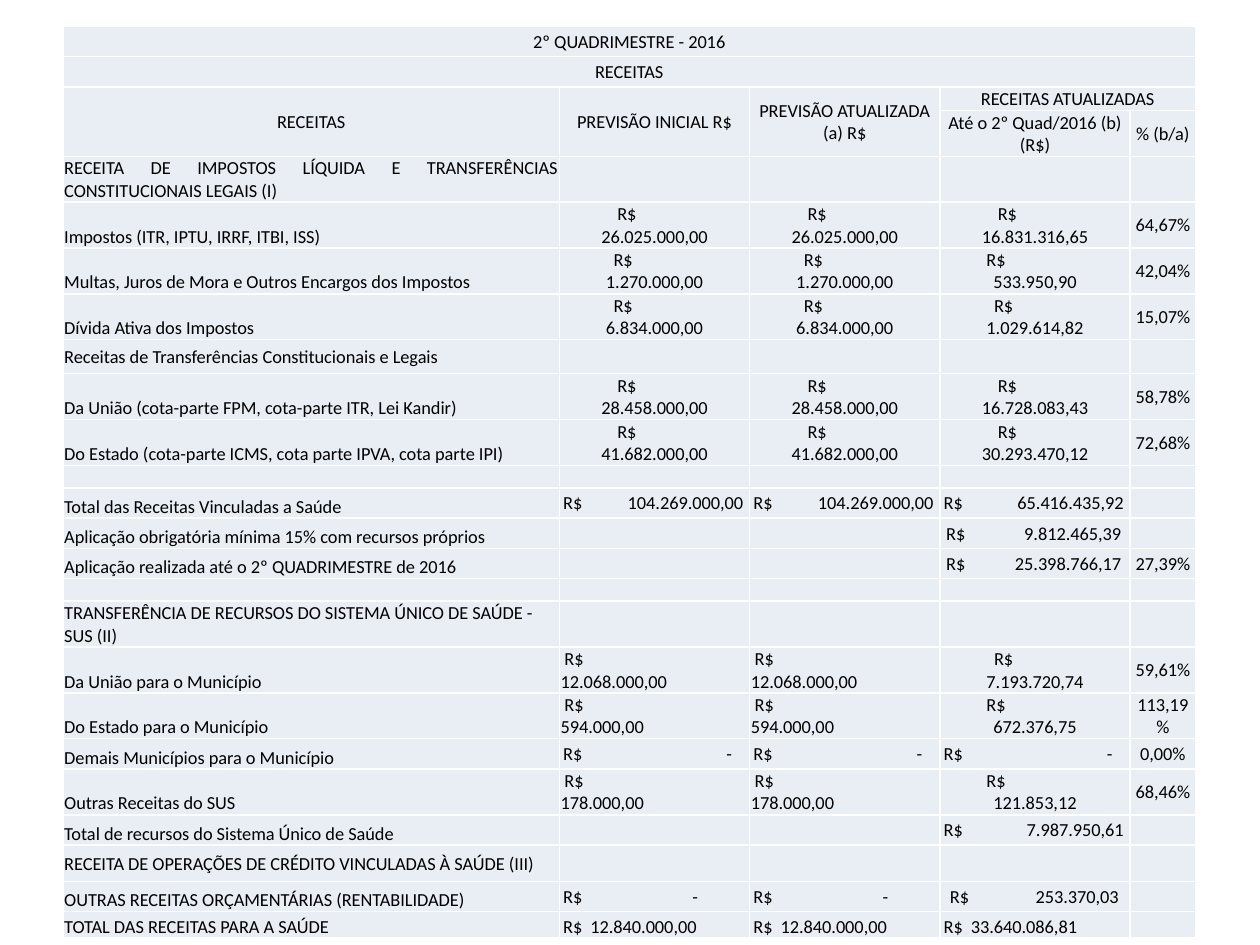
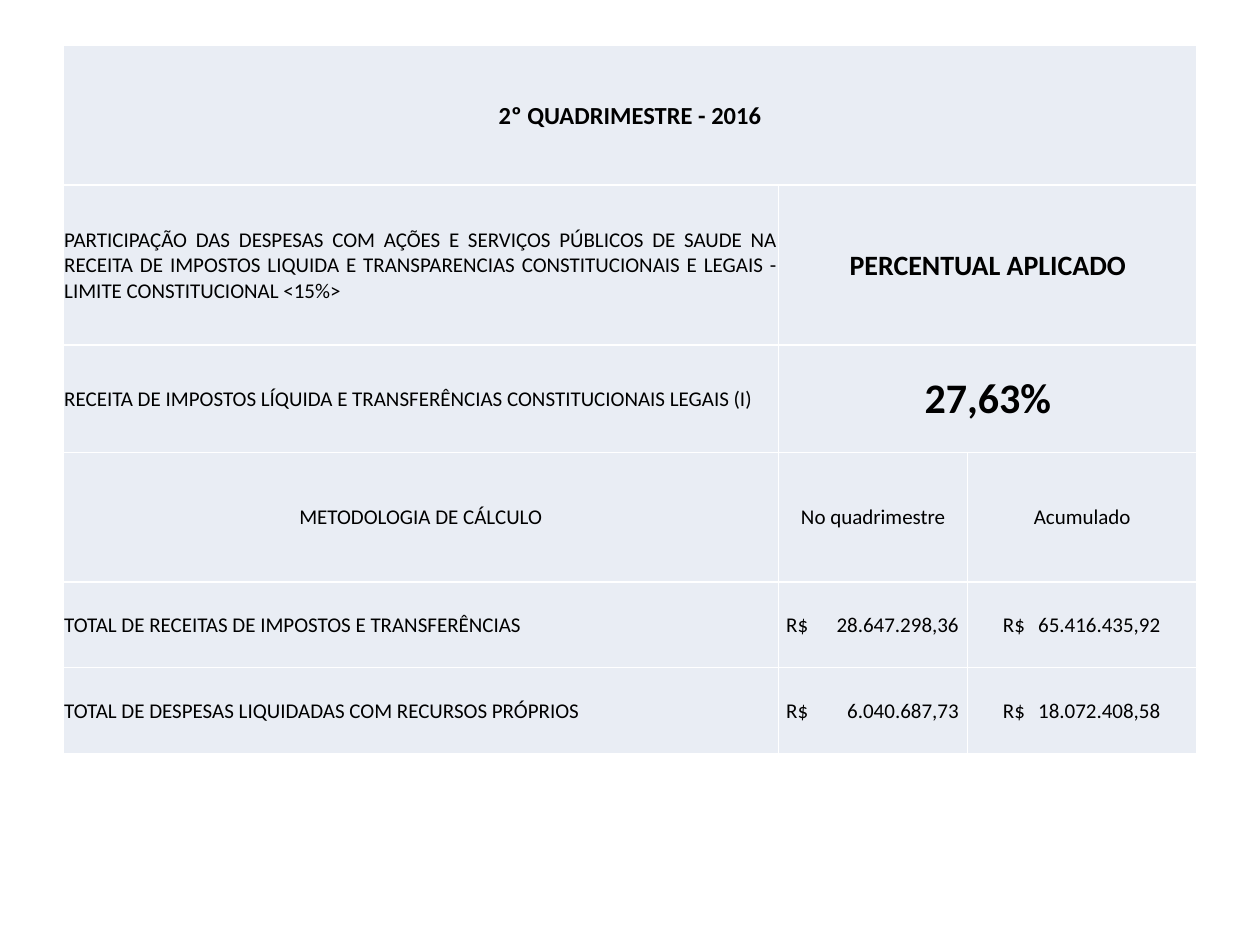
import pptx
import pptx.dml.color
import pptx.enum.text
import pptx.oxml
import pptx.oxml.ns
import pptx.util
from lxml import etree

Inches = pptx.util.Inches
Align = pptx.enum.text.PP_ALIGN
Anchor = pptx.enum.text.MSO_ANCHOR
qn = pptx.oxml.ns.qn

FONT = "Calibri"
INK, PAPER, RULE = "000000", "E9EDF4", "FFFFFF"
PERIOD = "2º QUADRIMESTRE - 2016"
TAXES = "RECEITA DE IMPOSTOS LÍQUIDA E TRANSFERÊNCIAS CONSTITUCIONAIS LEGAIS (I)"
LEFT, MID, FULL = Align.LEFT, Align.CENTER, Align.JUSTIFY
BASE, HALF = Anchor.BOTTOM, Anchor.MIDDLE
SMALL, BODY = 10.5, 12

PILE, EDGE = "pile", "edge"
WIDE, NEAR, DASH, TAIL = (0.03, 1.46), (0.05, 1.44), (0.03, 1.37), (0.03, 1.09)

HEADS = [
    (0, 0, 0, 4, PERIOD, HALF),
    (1, 0, 1, 4, "RECEITAS", HALF),
    (2, 0, 3, 0, "RECEITAS", HALF),
    (2, 1, 3, 1, "PREVISÃO INICIAL R$", HALF),
    (2, 2, 3, 2, "PREVISÃO ATUALIZADA (a) R$", HALF),
    (2, 3, 2, 4, "RECEITAS ATUALIZADAS", BASE),
    (3, 3, 3, 3, "Até o 2º Quad/2016 (b) (R$)", HALF),
    (3, 4, 3, 4, "% (b/a)", HALF),
]

# height, label, label anchor, forecast and its mode, revenue and its mode, rate
ITEMS = [
    (0.36, TAXES, HALF, "", None, "", None, ""),
    (0.36, "Impostos (ITR, IPTU, IRRF, ITBI, ISS)", BASE,
     "26.025.000,00", PILE, "16.831.316,65", PILE, "64,67%"),
    (0.36, "Multas, Juros de Mora e Outros Encargos dos Impostos", BASE,
     "1.270.000,00", PILE, "533.950,90", PILE, "42,04%"),
    (0.36, "Dívida Ativa dos Impostos", BASE,
     "6.834.000,00", PILE, "1.029.614,82", PILE, "15,07%"),
    (0.27, "Receitas de Transferências Constitucionais e Legais", HALF,
     "", None, "", None, ""),
    (0.36, "Da União (cota-parte FPM, cota-parte ITR, Lei Kandir)", BASE,
     "28.458.000,00", PILE, "16.728.083,43", PILE, "58,78%"),
    (0.36, "Do Estado (cota-parte ICMS, cota parte IPVA, cota parte IPI)", BASE,
     "41.682.000,00", PILE, "30.293.470,12", PILE, "72,68%"),
    (0.18, "", BASE, "", None, "", None, ""),
    (0.24, "Total das Receitas Vinculadas a Saúde", BASE,
     "104.269.000,00", WIDE, "65.416.435,92", WIDE, ""),
    (0.24, "Aplicação obrigatória mínima 15% com recursos próprios", BASE,
     "", None, "9.812.465,39", NEAR, ""),
    (0.24, "Aplicação realizada até o 2º QUADRIMESTRE de 2016", BASE,
     "", None, "25.398.766,17", NEAR, "27,39%"),
    (0.18, "", BASE, "", None, "", None, ""),
    (0.36, "TRANSFERÊNCIA DE RECURSOS DO SISTEMA ÚNICO DE SAÚDE - SUS (II)", HALF,
     "", None, "", None, ""),
    (0.36, "Da União para o Município", BASE,
     "12.068.000,00", EDGE, "7.193.720,74", PILE, "59,61%"),
    (0.36, "Do Estado para o Município", BASE,
     "594.000,00", EDGE, "672.376,75", PILE, "113,19%"),
    (0.24, "Demais Municípios para o Município", BASE,
     "-", DASH, "-", DASH, "0,00%"),
    (0.36, "Outras Receitas do SUS", BASE,
     "178.000,00", EDGE, "121.853,12", PILE, "68,46%"),
    (0.24, "Total de recursos do Sistema Único de Saúde", BASE,
     "", None, "7.987.950,61", WIDE, ""),
    (0.29, "RECEITA DE OPERAÇÕES DE CRÉDITO VINCULADAS À SAÚDE (III)", HALF,
     "", None, "", None, ""),
    (0.24, "OUTRAS RECEITAS ORÇAMENTÁRIAS (RENTABILIDADE)", BASE,
     "-", (0.03, 1.1), "253.370,03", (0.08, 1.42), ""),
    (0.21, "TOTAL DAS RECEITAS PARA A SAÚDE", BASE,
     "12.840.000,00", TAIL, "33.640.086,81", TAIL, ""),
]


def color(code):
    return pptx.dml.color.RGBColor.from_string(code)


def dress(cell):
    props = cell._tc.get_or_add_tcPr()
    for side in ("lnL", "lnR", "lnT", "lnB"):
        line = etree.SubElement(props, qn("a:" + side), w="12700")
        solid = etree.SubElement(line, qn("a:solidFill"))
        etree.SubElement(solid, qn("a:srgbClr"), val=RULE)
    cell.fill.solid()
    cell.fill.fore_color.rgb = color(PAPER)
    cell.margin_left = cell.margin_right = cell.margin_top = Inches(0.01)
    cell.margin_bottom = 0
    cell.vertical_anchor = HALF
    para = cell.text_frame.paragraphs[0]
    etree.SubElement(para._p, qn("a:endParaRPr"), sz="900")


def write(para, text, size, align=LEFT, bold=False):
    para.alignment = align
    run = para.add_run()
    run.text = text
    font = run.font
    font.name, font.size, font.bold = FONT, pptx.util.Pt(size), bold
    font.color.rgb = color(INK)


def put(cell, text, size, align=LEFT, anchor=HALF, bold=False):
    if text:
        cell.vertical_anchor = anchor
        write(cell.text_frame.paragraphs[0], text, size, align, bold)


def money(cell, sum, mode, size, anchor=HALF):
    if not sum:
        return
    cell.vertical_anchor = anchor
    para = cell.text_frame.paragraphs[0]
    if mode in (PILE, EDGE):
        write(para, "R$", size)
        lead = 0.06 + 0.03 * len(sum) if mode == PILE else 0.03
        para._p.get_or_add_pPr().set("marL", str(Inches(lead)))
        write(cell.text_frame.add_paragraph(), sum, size,
              MID if mode == PILE else LEFT)
        return
    lead, end = mode
    cell.margin_left = Inches(lead)
    write(para, "R$\t" + sum, size)
    tabs = etree.SubElement(para._p.get_or_add_pPr(), qn("a:tabLst"))
    etree.SubElement(tabs, qn("a:tab"), pos=str(Inches(end - lead)), algn="r")


def grid(deck, left, top, cols, rows):
    slide = deck.slides.add_slide(deck.slide_layouts[6])
    table = slide.shapes.add_table(
        len(rows), len(cols), Inches(left), Inches(top),
        Inches(sum(cols)), Inches(sum(rows))).table
    table.first_row = table.horz_banding = False
    for col, wide in zip(table.columns, cols):
        col.width = Inches(wide)
    for row, high in zip(table.rows, rows):
        row.height = Inches(high)
        for cell in row.cells:
            dress(cell)
    return table


def span(table, top, left, low, right):
    cell = table.cell(top, left)
    if (top, left) != (low, right):
        cell.merge(table.cell(low, right))
    return cell


def income(deck, left, top):
    highs = [0.24, 0.24, 0.18, 0.36] + [item[0] for item in ITEMS]
    table = grid(deck, left, top, [3.94, 1.51, 1.51, 1.51, 0.52], highs)
    for *area, text, anchor in HEADS:
        put(span(table, *area), text, SMALL, MID, anchor)
    for row, item in enumerate(ITEMS, 4):
        high, label, anchor, plan, form, real, mode, rate = item
        cells = table.rows[row].cells
        put(cells[0], label, SMALL, FULL if label == TAXES else LEFT, anchor)
        base = BASE if form == TAIL else HALF
        money(cells[1], plan, form, SMALL, base)
        money(cells[2], plan, form, SMALL, base)
        money(cells[3], real, mode, SMALL, base)
        put(cells[4], rate, SMALL, MID)


def share(deck, left, top):
    table = grid(deck, left, top, [5.68, 1.5, 1.82],
                 [1.11, 1.27, 0.85, 1.03, 0.68, 0.68])
    put(span(table, 0, 0, 0, 2), PERIOD, 14, MID, bold=True)
    put(table.cell(1, 0),
        "PARTICIPAÇÃO DAS DESPESAS COM AÇÕES E SERVIÇOS PÚBLICOS DE SAUDE NA "
        "RECEITA DE IMPOSTOS LIQUIDA E TRANSPARENCIAS CONSTITUCIONAIS E LEGAIS - "
        "LIMITE CONSTITUCIONAL <15%>", BODY, FULL)
    put(span(table, 1, 1, 1, 2), "PERCENTUAL APLICADO", 16, MID, bold=True)
    put(table.cell(2, 0), TAXES, BODY)
    put(span(table, 2, 1, 2, 2), "27,63%", 24, MID, bold=True)
    heads = ["METODOLOGIA DE CÁLCULO", "No quadrimestre", "Acumulado"]
    for col, text in enumerate(heads):
        put(table.cell(3, col), text, BODY, MID)
    sums = [
        ("TOTAL DE RECEITAS DE IMPOSTOS E TRANSFERÊNCIAS",
         "28.647.298,36", "65.416.435,92"),
        ("TOTAL DE DESPESAS LIQUIDADAS COM RECURSOS PRÓPRIOS",
         "6.040.687,73", "18.072.408,58"),
    ]
    for row, (label, part, total) in enumerate(sums, 4):
        put(table.cell(row, 0), label, BODY)
        money(table.cell(row, 1), part, (0.06, 1.43), BODY)
        money(table.cell(row, 2), total, (0.28, 1.53), BODY)


def main():
    deck = pptx.Presentation()
    deck.slide_width, deck.slide_height = Inches(10), Inches(7.5)
    income(deck, 0.5, 0.21)
    share(deck, 0.5, 0.36)
    deck.save("out.pptx")


if __name__ == "__main__":
    main()
